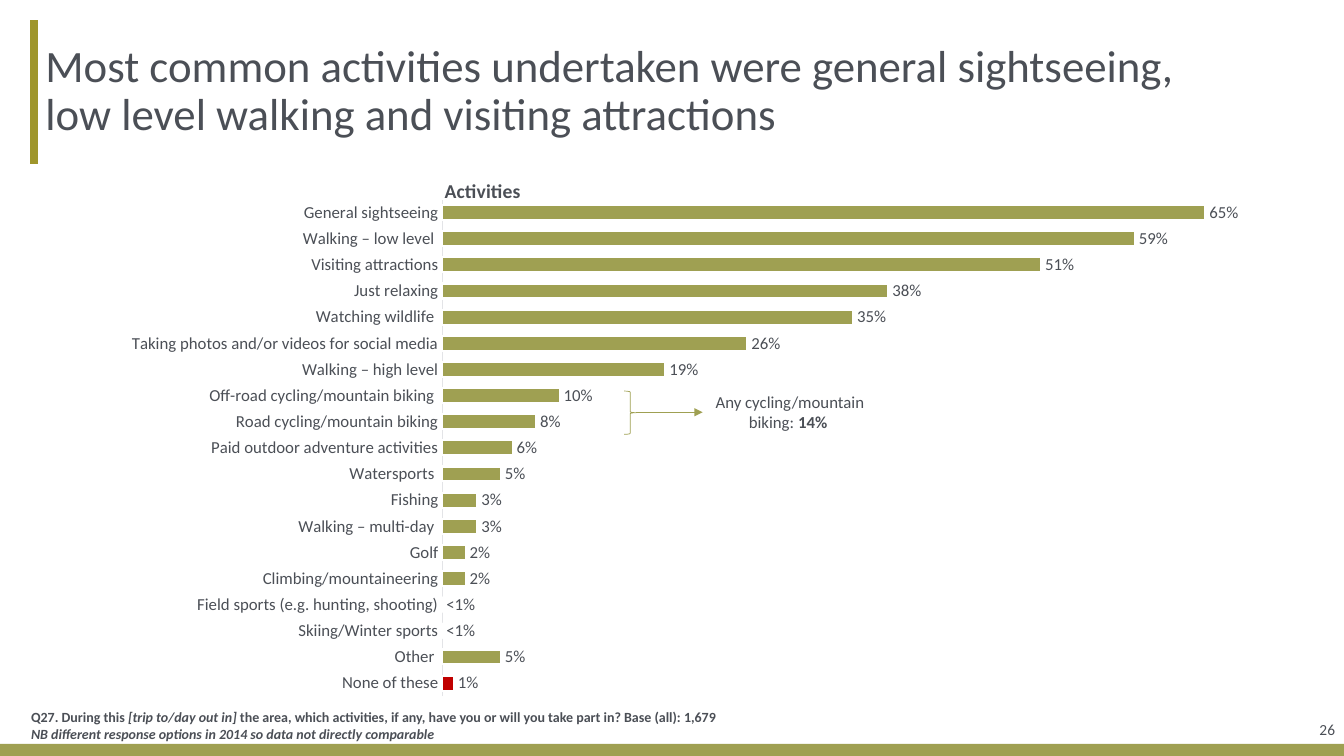
from lxml.etree import SubElement
from pptx import Presentation
from pptx.chart.data import CategoryChartData
from pptx.dml.color import RGBColor
from pptx.enum.chart import XL_CHART_TYPE as CT, XL_LABEL_POSITION as LP, XL_TICK_MARK as TM
from pptx.enum.shapes import MSO_CONNECTOR as MC, MSO_SHAPE as MS
from pptx.enum.text import MSO_ANCHOR as MA, PP_ALIGN as PA
from pptx.oxml import parse_xml
from pptx.oxml.ns import nsdecls, qn
from pptx.util import Inches, Pt

OLIVE = RGBColor(0x9F, 0xA0, 0x52)
ACCENT = RGBColor(0x9F, 0x96, 0x2B)
SLATE = RGBColor(0x4B, 0x4F, 0x56)
PALE = RGBColor(0xE3, 0xE4, 0xE7)
RED = RGBColor(0xC0, 0x00, 0x00)
WHITE = RGBColor(0xFF, 0xFF, 0xFF)

ACTIVITIES = [
    ("General sightseeing", 0.65),
    ("Walking – low level ", 0.59),
    ("Visiting attractions", 0.51),
    ("Just relaxing", 0.38),
    ("Watching wildlife ", 0.35),
    ("Taking photos and/or videos for social media", 0.26),
    ("Walking – high level", 0.19),
    ("Off-road cycling/mountain biking ", 0.10),
    ("Road cycling/mountain biking", 0.08),
    ("Paid outdoor adventure activities", 0.06),
    ("Watersports ", 0.05),
    ("Fishing", 0.03),
    ("Walking – multi-day ", 0.03),
    ("Golf", 0.02),
    ("Climbing/mountaineering", 0.02),
    ("Field sports (e.g. hunting, shooting)", 0),
    ("Skiing/Winter sports", 0),
    ("Other ", 0.05),
    ("None of these", 0.01),
]


class SlideBuilder:
    """Draws styled elements on the current slide."""

    def __init__(self, s, name="Calibri", color=SLATE):
        self.s, self.name, self.color = s, name, color

    def style(self, font, size, bold=None):
        font.name, font.size, font.bold = self.name, Pt(size), bold
        font.color.rgb = self.color

    def text(self, box, paragraphs, size, bold=None, align=PA.LEFT,
             anchor=MA.TOP, spacing=None, insets=(0.1, 0.05, 0.1, 0.05)):
        tf = self.s.shapes.add_textbox(*map(Inches, box)).text_frame
        tf.word_wrap, tf.vertical_anchor = True, anchor
        (tf.margin_left, tf.margin_top,
         tf.margin_right, tf.margin_bottom) = map(Inches, insets)
        for i, runs in enumerate(paragraphs):
            p = tf.add_paragraph() if i else tf.paragraphs[0]
            p.alignment, p.line_spacing = align, spacing
            self.style(p.font, size, bold)
            for text, emphasis in runs:
                r = p.add_run()
                r.text = text
                if emphasis:
                    setattr(r.font, emphasis, True)

    def shape(self, kind, box, fill=None, line=None, width=0.5):
        sp = self.s.shapes.add_shape(kind, *map(Inches, box))
        sp.shadow.inherit = False
        for part, color in ((sp.fill, fill), (sp.line.fill, line)):
            if color is None:
                part.background()
            else:
                part.solid()
                part.fore_color.rgb = color
        if line is not None:
            sp.line.width = Pt(width)

    def line(self, ends, color, width, arrow=False):
        c = self.s.shapes.add_connector(MC.STRAIGHT, *map(Inches, ends))
        c.line.color.rgb, c.line.width = color, Pt(width)
        if arrow:
            SubElement(c.line._get_or_add_ln(), qn("a:tailEnd"), type="triangle")
        SubElement(c._element.spPr, qn("a:effectLst"))

    def layout(self, element, **values):
        inner = '<c:layoutTarget val="inner"/>' if "w" in values else ""
        modes = "".join(f'<c:{k}Mode val="edge"/>' for k in "xy")
        sizes = "".join(f'<c:{k} val="{v}"/>' for k, v in values.items())
        for old in element.findall(qn("c:layout")):
            element.remove(old)
        new = parse_xml(f'<c:layout {nsdecls("c")}><c:manualLayout>{inner}{modes}'
                        f'{sizes}</c:manualLayout></c:layout>')
        tx = element.find(qn("c:tx"))
        element.insert(0 if tx is None else 1, new)

    def bar_chart(self, box, title, rows):
        data = CategoryChartData(number_format="0%")
        data.categories = [name for name, _ in rows]
        data.add_series("Series 1", [value for _, value in rows])
        chart = self.s.shapes.add_chart(CT.BAR_CLUSTERED, *map(Inches, box), data).chart
        self.style(chart.font, 10)
        chart.has_legend = False
        tf = chart.chart_title.text_frame
        tf.text = title
        self.style(tf.paragraphs[0].font, 14, True)
        chart.chart_title.include_in_layout = False
        self.layout(chart.chart_title._element, x=0.31, y=0.02)
        self.layout(chart._chartSpace.chart.plotArea, x=0.311, y=0.067, w=0.666, h=0.916)

        cat, val = chart.category_axis, chart.value_axis
        cat.major_tick_mark = cat.minor_tick_mark = TM.NONE
        cat.format.line.color.rgb, cat.format.line.width = PALE, Pt(0.75)
        self.style(cat.tick_labels.font, 12)
        val.minimum_scale, val.maximum_scale = 0, 0.7
        val.has_major_gridlines = val.visible = False

        plot = chart.plots[0]
        plot.gap_width, plot.vary_by_categories = 75, False
        series = plot.series[0]
        self.bar_format(series.format, OLIVE)
        self.bar_format(series.points[0].format, RED)
        labels = series.data_labels
        labels.show_value, labels.position = True, LP.OUTSIDE_END
        labels.number_format, labels.number_format_is_linked = "0%", False
        self.style(labels.font, 12)
        for i, (_, value) in enumerate(rows):
            if value == 0:
                label = series.points[i].data_label
                label.text_frame.text = "<1%"
                self.style(label.text_frame.paragraphs[0].runs[0].font, 12)
                label.position = LP.OUTSIDE_END

    def bar_format(self, fmt, color):
        fmt.fill.solid()
        fmt.fill.fore_color.rgb = color
        fmt.line.color.rgb, fmt.line.width = WHITE, Pt(1.5)


def main():
    prs = Presentation()
    prs.slide_width, prs.slide_height = Inches(13.33), Inches(7.5)
    b = SlideBuilder(prs.slides.add_slide(prs.slide_layouts[6]))
    b.shape(MS.RECTANGLE, (0, 7.38, 13.33, 0.15), fill=OLIVE)
    b.line((0.34, 0.2, 0.34, 1.63), ACCENT, 6)
    b.text((12.42, 6.95, 0.92, 0.58), [[("26", None)]], 11, align=PA.RIGHT, anchor=MA.MIDDLE)
    b.bar_chart((0.58, 1.62, 12.24, 5.38), "Activities", ACTIVITIES[::-1])
    b.text((0.37, 0.2, 11.65, 1.42),
           [[("Most common activities undertaken were general sightseeing, "
              "low level walking and visiting attractions", None)]],
           32, anchor=MA.MIDDLE, spacing=0.9, insets=(0.08, 0, 0, 0))
    b.text((0.21, 7.03, 12.21, 0.38),
           [[("Q27. During this ", None), ("[trip to/day out in]", "italic"),
             (" the area, which activities, if any, have you or will you take part in? "
              "Base (all): 1,679", None)],
            [("NB different response options in 2014 so data not directly comparable", "italic")]],
           10, bold=True, anchor=MA.BOTTOM)
    b.text((6.97, 3.84, 1.73, 0.5),
           [[("Any cycling/mountain biking: ", None), ("14% ", "bold")]], 12, align=PA.CENTER)
    b.shape(MS.RIGHT_BRACE, (6.19, 3.88, 0.12, 0.43), line=OLIVE)
    b.line((6.31, 4.09, 6.97, 4.09), OLIVE, 0.5, arrow=True)
    prs.save("out.pptx")


if __name__ == "__main__":
    main()
